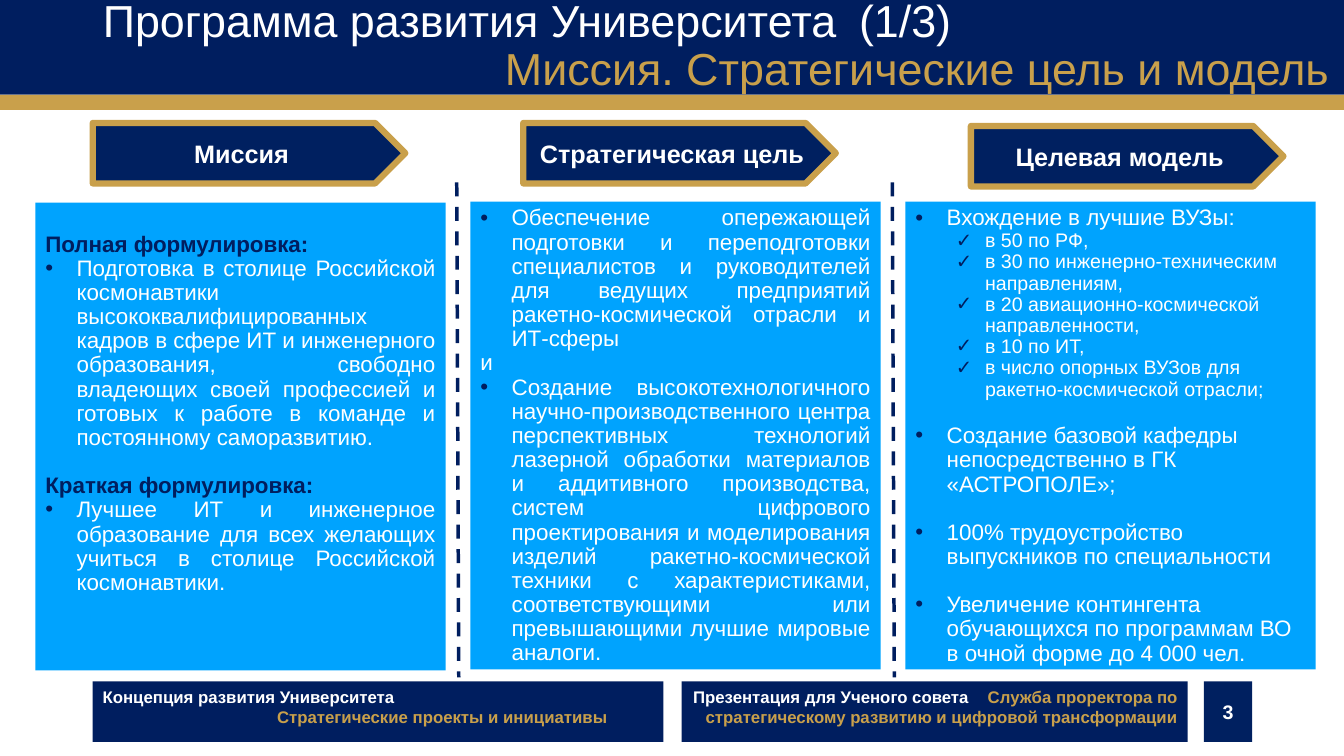
from dataclasses import dataclass

from lxml.etree import SubElement
from pptx import Presentation
from pptx.dml.color import RGBColor as RGB
from pptx.enum.dml import MSO_LINE
from pptx.enum.shapes import MSO_CONNECTOR, MSO_SHAPE as SHAPE
from pptx.enum.text import MSO_ANCHOR as ANCHOR, MSO_AUTO_SIZE, PP_ALIGN as ALIGN
from pptx.oxml.ns import qn
from pptx.util import Inches, Pt


@dataclass(frozen=True)
class Theme:
    font: str = "Arial"
    navy: str = "001E5F"
    badge: str = "002060"
    gold: str = "C9A04B"
    panel: str = "00A3FE"
    white: str = "FFFFFF"
    title: int = 32
    heading: int = 18
    body: int = 16
    detail: int = 14
    footer: int = 12
    gap: float = 17.2


THEME = Theme()


def text(words, color=THEME.white, size=THEME.body, bold=False, spread=0):
    return dict(words=words, color=color, size=size, bold=bold, spread=spread)


def line(*runs, bullet=None, left=0, hang=0, before=0, tab=None, **values):
    return dict(runs=runs, bullet=bullet, left=left, hang=hang, tab=tab,
                values={"space_before": Pt(before), "space_after": Pt(0), **values})


def point(words, align=ALIGN.LEFT, before=0):
    return line(text(words), bullet="•", left=0.31, hang=0.31, before=before,
                alignment=align, line_spacing=0.9)


def detail(words):
    return line(text(words, size=THEME.detail), bullet="✓", left=0.69, hang=0.29,
                level=1, alignment=ALIGN.LEFT, line_spacing=0.9)


def plain(words, before=0, **look):
    return line(text(words, **look), before=before, alignment=ALIGN.JUSTIFY,
                line_spacing=0.9)


class SlideBuilder:
    def __init__(self, slide, theme):
        self.slide, self.theme = slide, theme

    def fill_text(self, holder, lines, **frame_values):
        frame = holder.text_frame
        defaults = {"word_wrap": True, "auto_size": MSO_AUTO_SIZE.NONE,
                    "vertical_anchor": ANCHOR.TOP,
                    "margin_left": Inches(0.1), "margin_right": Inches(0.1),
                    "margin_top": Inches(0.05), "margin_bottom": Inches(0.05)}
        for name, value in {**defaults, **frame_values}.items():
            setattr(frame, name, value)
        for number, content in enumerate(lines):
            paragraph = frame.add_paragraph() if number else frame.paragraphs[0]
            for name, value in content["values"].items():
                setattr(paragraph, name, value)
            self.indent(paragraph, content)
            for part in content["runs"]:
                self.add_words(paragraph, part)

    def indent(self, paragraph, content):
        props = paragraph._p.get_or_add_pPr()
        props.set("marL", str(Inches(content["left"])))
        props.set("indent", str(-Inches(content["hang"])))
        if content["bullet"]:
            color = SubElement(props, qn("a:buClr"))
            SubElement(color, qn("a:srgbClr"), val=self.theme.navy)
            SubElement(props, qn("a:buFont"), typeface=self.theme.font)
            SubElement(props, qn("a:buChar"), char=content["bullet"])
        else:
            SubElement(props, qn("a:buNone"))
        if content["tab"]:
            stops = SubElement(props, qn("a:tabLst"))
            SubElement(stops, qn("a:tab"), pos=str(Inches(content["tab"])), algn="l")

    def add_words(self, paragraph, part):
        run = paragraph.add_run()
        run.text = part["words"]
        values = {"name": self.theme.font, "size": Pt(part["size"]), "bold": part["bold"]}
        for name, value in values.items():
            setattr(run.font, name, value)
        run.font.color.rgb = RGB.from_string(part["color"])
        if part["spread"]:
            run._r.get_or_add_rPr().set("spc", str(part["spread"]))

    def block(self, box, fill, kind=SHAPE.RECTANGLE, border=None):
        block = self.slide.shapes.add_shape(kind, *map(Inches, box))
        block.shadow.inherit = False
        block.fill.solid()
        block.fill.fore_color.rgb = RGB.from_string(fill)
        if border:
            block.line.color.rgb = RGB.from_string(border)
            block.line.width = Pt(4.5)
        else:
            block.line.fill.background()
        return block

    def placeholder(self, index, box, lines, fill=None, **frame_values):
        holder = self.slide.placeholders[index]
        self.slide.shapes._spTree.append(holder._element)
        for name, value in zip(("left", "top", "width", "height"), box):
            setattr(holder, name, Inches(value))
        if fill:
            holder.fill.solid()
            holder.fill.fore_color.rgb = RGB.from_string(fill)
        self.fill_text(holder, lines, **frame_values)

    def heading(self, left, top, words):
        arrow = self.block((left, top, 3.1, 0.6), self.theme.badge,
                           SHAPE.PENTAGON, self.theme.gold)
        label = text(words, size=self.theme.heading, bold=True)
        self.fill_text(arrow, [line(label, alignment=ALIGN.CENTER)],
                       vertical_anchor=ANCHOR.MIDDLE)

    def divider(self, left):
        ends = map(Inches, (left, 1.81, left + 0.02, 6.72))
        divider = self.slide.shapes.add_connector(MSO_CONNECTOR.STRAIGHT, *ends)
        divider.line.color.rgb = RGB.from_string(self.theme.navy)
        divider.line.width = Pt(2.5)
        divider.line.dash_style = MSO_LINE.DASH
        SubElement(divider._element.spPr, qn("a:effectLst"))

    def footer(self, left, width, fill, lines, **frame_values):
        self.fill_text(self.block((left, 6.76, width, 0.6), fill), lines, **frame_values)


MISSION = [
    plain("Полная формулировка:", color=THEME.navy, bold=True),
    point("Подготовка в столице Российской космонавтики высококвалифицированных кадров "
          "в сфере ИТ и инженерного образования, свободно владеющих своей профессией "
          "и готовых к работе в команде и постоянному саморазвитию.", ALIGN.JUSTIFY),
    plain("Краткая формулировка: ", before=THEME.gap, color=THEME.navy, bold=True),
    point("Лучшее ИТ и инженерное образование для всех желающих учиться "
          "в столице Российской космонавтики.", ALIGN.JUSTIFY),
]
GOAL = [
    point("Обеспечение опережающей подготовки и переподготовки специалистов "
          "и руководителей для ведущих предприятий ракетно-космической отрасли "
          "и ИТ-сферы", ALIGN.JUSTIFY),
    plain("и"),
    point("Создание высокотехнологичного научно-производственного центра перспективных "
          "технологий лазерной обработки материалов и аддитивного производства, систем "
          "цифрового проектирования и моделирования изделий ракетно-космической техники "
          "с характеристиками, соответствующими или превышающими лучшие мировые аналоги.",
          ALIGN.JUSTIFY),
]
MODEL = [
    point("Вхождение в лучшие ВУЗы:"),
    *map(detail, ("в 50 по РФ,",
                  "в 30 по инженерно-техническим направлениям,",
                  "в 20 авиационно-космической направленности,",
                  "в 10 по ИТ,",
                  "в число опорных ВУЗов для ракетно-космической отрасли;")),
    *(point(words, before=THEME.gap) for words in (
        "Создание базовой кафедры непосредственно в ГК «АСТРОПОЛЕ»;",
        "100% трудоустройство выпускников по специальности",
        "Увеличение контингента обучающихся по программам ВО "
        "в очной форме до 4 000 чел.")),
]


def main():
    deck = Presentation()
    deck.slide_width, deck.slide_height = Inches(13.33), Inches(7.5)
    slide = deck.slides.add_slide(deck.slide_layouts[4])
    spare = slide.placeholders[3]._element
    spare.getparent().remove(spare)
    page = SlideBuilder(slide, THEME)

    page.block((0, 0, 13.33, 0.94), THEME.navy)
    page.block((0, 0.94, 13.33, 0.15), THEME.gold)
    page.placeholder(0, (0.92, 0, 12.42, 0.93), [
        line(text("Программа развития Университета\t(1/3)", size=THEME.title),
             tab=11, alignment=ALIGN.LEFT, line_spacing=0.9),
        line(text("Миссия. Стратегические цель и модель", THEME.gold, THEME.title),
             alignment=ALIGN.RIGHT, line_spacing=0.9),
    ], vertical_anchor=ANCHOR.MIDDLE, margin_right=Inches(0.15))

    for left, top, words in ((0.92, 1.22, "Миссия"),
                             (5.19, 1.22, "Стратегическая цель"),
                             (9.63, 1.25, "Целевая модель")):
        page.heading(left, top, words)
    for left in (4.53, 8.85):
        page.divider(left)
    for column, (index, top, inset, lines) in enumerate((
            (1, 2.01, 0.3, MISSION), (2, 2, 0.05, GOAL), (4, 2, 0.05, MODEL))):
        page.placeholder(index, (0.35 + 4.315 * column, top, 4.07, 4.64), lines,
                         THEME.panel, margin_top=Inches(inset))

    small = dict(size=THEME.footer, bold=True)
    page.footer(0.92, 5.66, THEME.navy, [
        line(text("Концепция развития Университета", **small), alignment=ALIGN.LEFT),
        line(text("Стратегические проекты и инициативы", THEME.gold, **small),
             left=1.73, alignment=ALIGN.LEFT)])
    page.footer(6.76, 5.02, THEME.navy, [
        line(text("Презентация для Ученого совета", **small),
             text(" ", spread=1000, **small),
             text("Служба проректора по стратегическому развитию и цифровой "
                  "трансформации", THEME.gold, **small), alignment=ALIGN.RIGHT)])
    page.footer(11.94, 0.48, THEME.badge, [
        line(text("3", size=THEME.detail, bold=True), alignment=ALIGN.CENTER)],
        vertical_anchor=ANCHOR.MIDDLE)
    deck.save("out.pptx")


if __name__ == "__main__":
    main()
